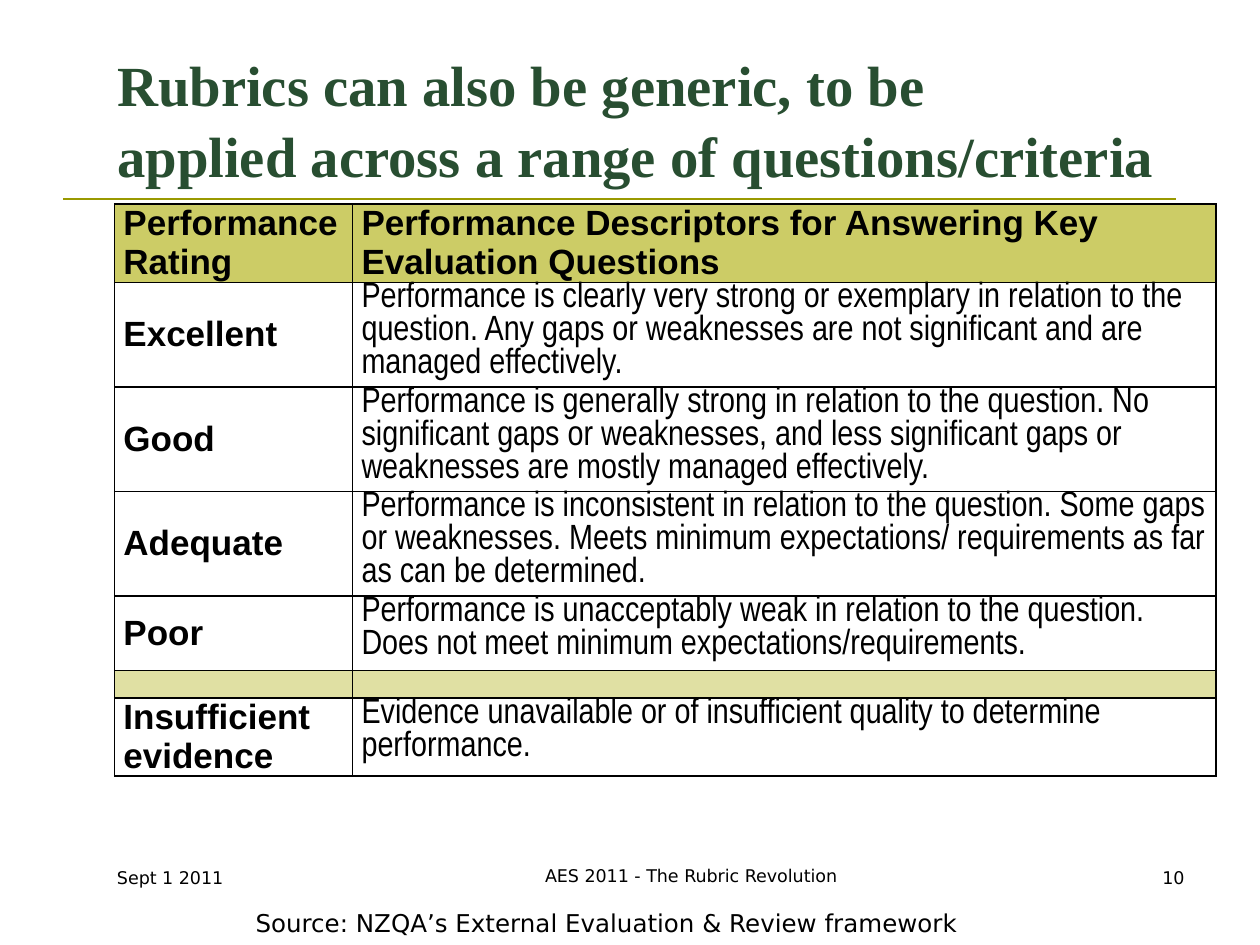
"""Build the slide on generic rubrics with its table of performance ratings."""
from lxml.etree import SubElement
from pptx import Presentation
from pptx.dml.color import RGBColor
from pptx.enum.text import MSO_ANCHOR, MSO_AUTO_SIZE, PP_ALIGN
from pptx.oxml.ns import qn
from pptx.util import Inches, Pt

COLORS = {"title": "284E31", "rule": "999900", "head": "CCCC66",
          "band": "E0E0A3", "ink": "000000"}
ROWS = [
    (0.3, "Performance Rating",
     "Performance Descriptors for Answering Key Evaluation Questions"),
    (0.83, "Excellent",
     "Performance is clearly very strong or exemplary in relation to the question. "
     "Any gaps or weaknesses are not significant and are managed effectively."),
    (0.83, "Good",
     "Performance is generally strong in relation to the question. No significant gaps "
     "or weaknesses, and less significant gaps or weaknesses are mostly managed effectively."),
    (0.83, "Adequate",
     "Performance is inconsistent in relation to the question. Some gaps or weaknesses. "
     "Meets minimum expectations/ requirements as far as can be determined."),
    (0.59, "Poor",
     "Performance is unacceptably weak in relation to the question. "
     "Does not meet minimum expectations/requirements."),
    (0.22, "", ""),
    (0.6, "Insufficient evidence",
     "Evidence unavailable or of insufficient quality to determine performance."),
]
NOTES = [
    (7.84, 6.83, 1.66, 0.5, "10", 10, PP_ALIGN.RIGHT, True),
    (1.93, 7.16, 5.83, 0.34, "Source: NZQA’s External Evaluation & Review framework",
     14, PP_ALIGN.LEFT, False),
    (0.83, 6.83, 2.01, 0.5, "Sept 1 2011", 10, PP_ALIGN.LEFT, True),
    (3.9, 6.82, 3.17, 0.5, "AES 2011 - The Rubric Revolution", 10, PP_ALIGN.CENTER, True),
]


def style(para, face, size, color, bold=False):
    for run in para.runs:
        run.font.name = face
        run.font.size = Pt(size)
        run.font.bold = bold
        run.font.color.rgb = RGBColor.from_string(COLORS[color])


def border(cell):
    props = cell._tc.get_or_add_tcPr()
    for spot, side in enumerate(("a:lnL", "a:lnR", "a:lnT", "a:lnB")):
        line = props.makeelement(qn(side), {"w": str(Pt(1))})
        fill = SubElement(line, qn("a:solidFill"))
        SubElement(fill, qn("a:srgbClr"), val=COLORS["ink"])
        props.insert(spot, line)


prs = Presentation()
prs.slide_width, prs.slide_height = Inches(10), Inches(7.5)
slide = prs.slides.add_slide(prs.slide_layouts[5])

rule = slide.shapes.add_connector(1, Inches(0.5), Inches(1.58), Inches(9.33), Inches(1.58))
rule.line.color.rgb = RGBColor.from_string(COLORS["rule"])
rule.line.width = Pt(1.5)
SubElement(rule._element.spPr, qn("a:effectLst"))

title = slide.shapes.title
title.left, title.top = Inches(0.83), Inches(0.3)
title.width, title.height = Inches(8.98), Inches(1.25)
frame = title.text_frame
frame.text = "Rubrics can also be generic, to be \vapplied across a range of questions/criteria"
frame.auto_size = MSO_AUTO_SIZE.NONE
frame.vertical_anchor = MSO_ANCHOR.BOTTOM
para = frame.paragraphs[0]
para.alignment = PP_ALIGN.LEFT
para.line_spacing = 1.04
style(para, "Times New Roman", 32.4, "title", True)

table = slide.shapes.add_table(len(ROWS), 2, Inches(0.91), Inches(1.62),
                               Inches(8.74), Inches(4.2)).table
table.columns[0].width, table.columns[1].width = Inches(1.89), Inches(6.85)
for i, (height, *texts) in enumerate(ROWS):
    table.rows[i].height = Inches(height)
    for j, text in enumerate(texts):
        cell = table.cell(i, j)
        cell.margin_left = cell.margin_right = Inches(0.07)
        cell.margin_top = cell.margin_bottom = 0
        cell.vertical_anchor = MSO_ANCHOR.MIDDLE if i and not j else MSO_ANCHOR.TOP
        if i == 0 or not text:
            cell.fill.solid()
            cell.fill.fore_color.rgb = RGBColor.from_string(COLORS["band" if i else "head"])
        else:
            cell.fill.background()
        border(cell)
        para = cell.text_frame.paragraphs[0]
        if text:
            para.text = text
            para.space_before, para.space_after = Pt(0), Pt(3)
            plain = i and j
            style(para, "Arial Narrow" if plain else "Arial", 20, "ink", not plain)
        else:
            SubElement(para._p, qn("a:endParaRPr"), sz="1000")

for left, top, width, height, text, size, align, wrap in NOTES:
    box = slide.shapes.add_textbox(Inches(left), Inches(top), Inches(width), Inches(height))
    frame = box.text_frame
    frame.word_wrap = wrap
    frame.auto_size = MSO_AUTO_SIZE.NONE if wrap else MSO_AUTO_SIZE.SHAPE_TO_FIT_TEXT
    para = frame.paragraphs[0]
    para.text = text
    para.alignment = align
    style(para, "DejaVu Sans", size, "ink")

prs.save("out.pptx")
